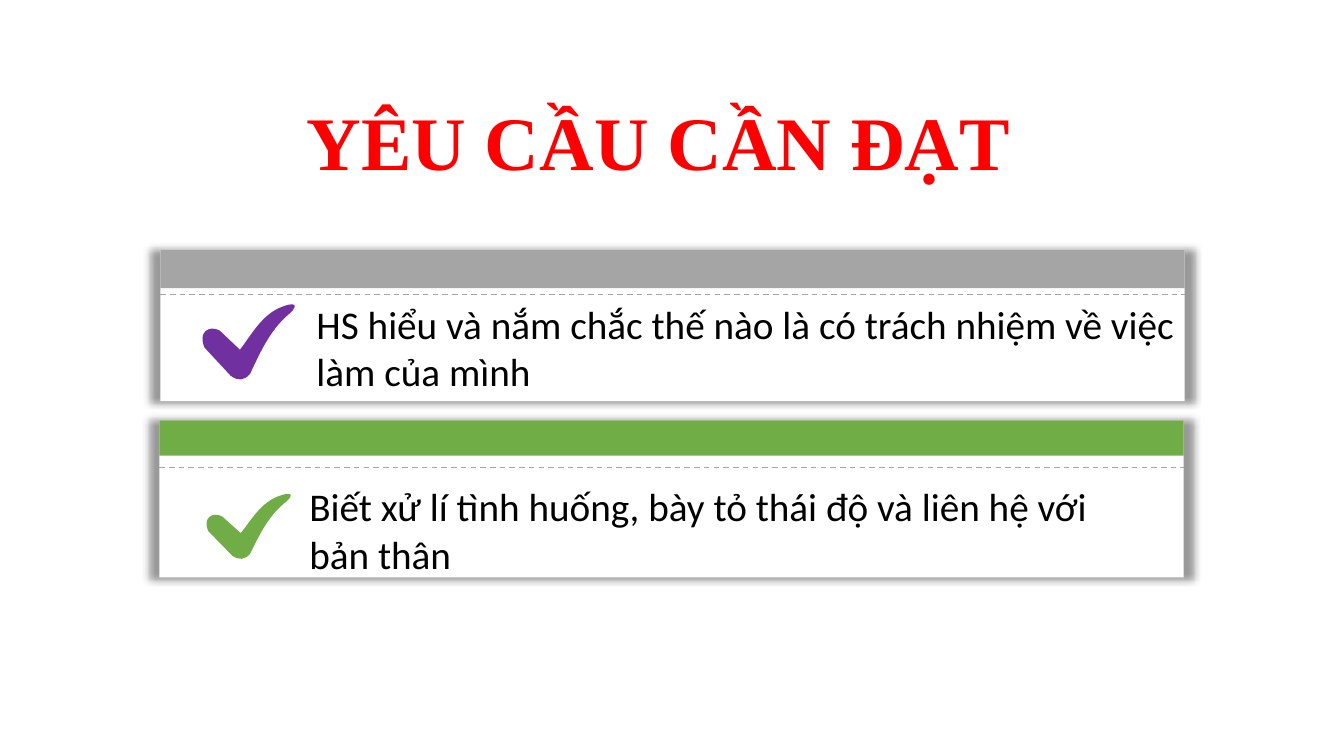
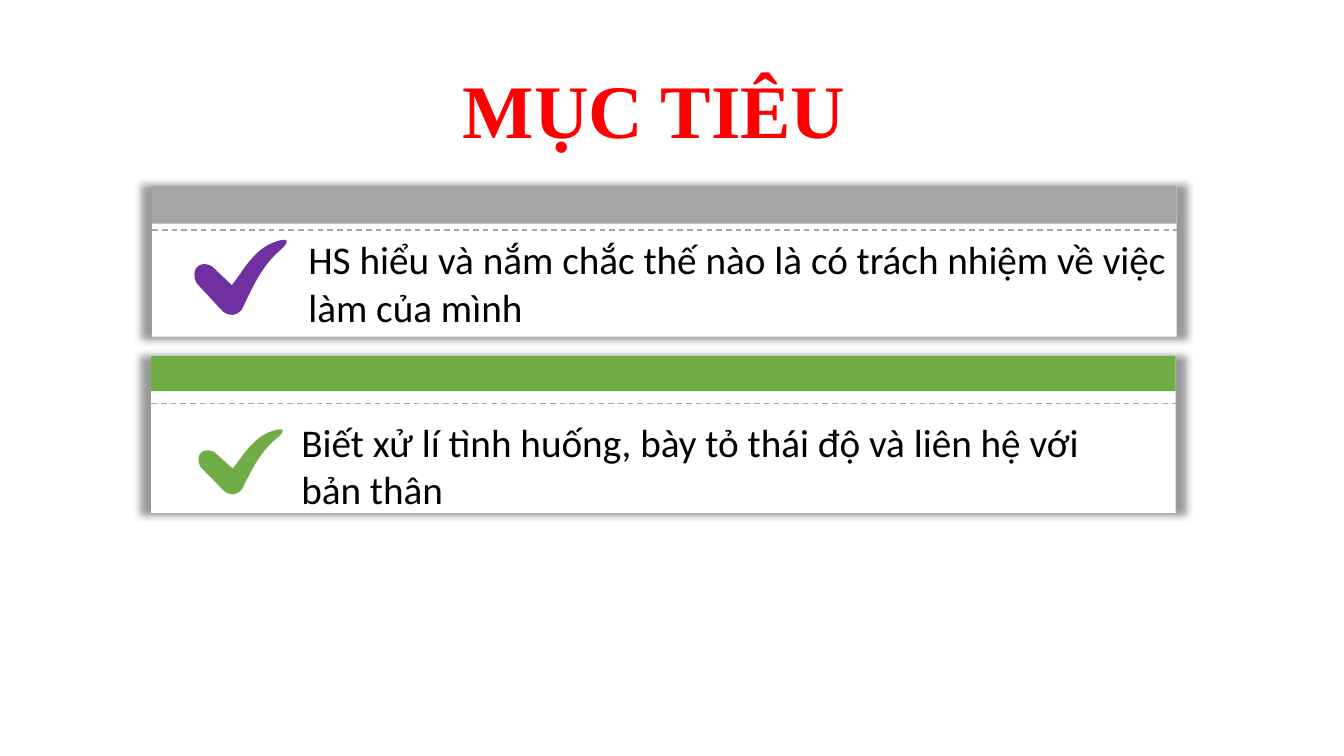
import pptx
import pptx.util
import pptx.dml.color
import pptx.enum.dml
import pptx.enum.shapes
import pptx.enum.text
import pptx.oxml
import pptx.oxml.ns

Inches, Pt = pptx.util.Inches, pptx.util.Pt
RGBColor = pptx.dml.color.RGBColor
RECT = pptx.enum.shapes.MSO_SHAPE.RECTANGLE

RED = RGBColor(0xFF, 0x00, 0x00)
BLACK = RGBColor(0x00, 0x00, 0x00)
WHITE = RGBColor(0xFF, 0xFF, 0xFF)
GRAY = RGBColor(0xA5, 0xA5, 0xA5)
GREEN = RGBColor(0x70, 0xAD, 0x47)
PURPLE = RGBColor(0x70, 0x30, 0xA0)
GOLD = RGBColor(0xBD, 0x8E, 0x00)

# Content: title, title position, top left of the cards
SLIDES = [
    ("YÊU CẦU CẦN ĐẠT", (2.78, 0.95), (1.59, 2.48)),
    ("MỤC TIÊU", (2.74, 0.63), (1.51, 1.84)),
]
# "at" is measured from the top left of the cards, the other places from the card
CARDS = [
    dict(text="HS hiểu và nắm chắc thế nào là có trách nhiệm về việc làm của mình",
         at=(0, 0), height=1.5, band=0.38, band_color=GRAY, rule=0.44,
         check=(0.42, 0.54, 0.92, 0.74), check_color=PURPLE, text_box=(1.45, 0.45, 8.71)),
    dict(text="Biết xử lí tình huống, bày tỏ thái độ và liên hệ với bản thân",
         at=(-0.01, 1.69), height=1.56, band=0.35, band_color=GREEN, rule=0.47,
         check=(0.47, 0.73, 0.84, 0.64), check_color=GREEN, text_box=(1.39, 0.57, 8.43)),
]
CARD_WIDTH = 10.16

# Check mark in a CHECK_SIZE box: pen command and its points
CHECK_SIZE = (0.92, 0.74)
CHECK_OUTLINE = [
    ("moveTo", [(0.37, 0.45)]),
    ("lnTo", [(0.17, 0.26)]),
    ("cubicBezTo", [(0.06, 0.20), (-0.05, 0.28), (0.02, 0.43)]),
    ("lnTo", [(0.28, 0.71)]),
    ("cubicBezTo", [(0.35, 0.76), (0.41, 0.76), (0.47, 0.69)]),
    ("cubicBezTo", [(0.57, 0.48), (0.66, 0.27), (0.84, 0.11)]),
    ("cubicBezTo", [(0.93, 0.04), (0.96, -0.04), (0.80, 0.02)]),
    ("cubicBezTo", [(0.59, 0.09), (0.48, 0.31), (0.37, 0.45)]),
    ("close", []),
]

NS = pptx.oxml.ns.nsdecls("a")
SHADOW = (f'<a:effectLst {NS}><a:outerShdw blurRad="63500" sx="102000" sy="102000" '
          'algn="ctr" rotWithShape="0"><a:srgbClr val="000000"><a:alpha val="40000"/>'
          '</a:srgbClr></a:outerShdw></a:effectLst>')
NO_EFFECT = f"<a:effectLst {NS}/>"
TITLE_OUTLINE = (f'<a:ln {NS} w="9000"><a:solidFill><a:srgbClr val="{GOLD}"/>'
                 '</a:solidFill></a:ln>')


def paint(sp, color):
    sp.shadow.inherit = False
    sp.fill.solid()
    sp.fill.fore_color.rgb = color
    sp.line.fill.background()


def add_rect(shapes, x, y, w, h, color):
    sp = shapes.add_shape(RECT, Inches(x), Inches(y), Inches(w), Inches(h))
    paint(sp, color)
    return sp


def add_text(shapes, x, y, w, h, text, font, size, color):
    tf = shapes.add_textbox(Inches(x), Inches(y), Inches(w), Inches(h)).text_frame
    tf.word_wrap = True
    p = tf.paragraphs[0]
    r = p.add_run()
    r.text = text
    r.font.name, r.font.size = font, Pt(size)
    r.font.color.rgb = color
    return tf, p, r


def add_title(shapes, x, y, text):
    tf, p, r = add_text(shapes, x, y, 7.5, 0.89, text, "Times New Roman", 54, RED)
    tf.vertical_anchor = pptx.enum.text.MSO_ANCHOR.MIDDLE
    p.alignment = pptx.enum.text.PP_ALIGN.CENTER
    r.font.bold = True
    r.font._element.insert(0, pptx.oxml.parse_xml(TITLE_OUTLINE))


def add_rule(shapes, x, y):
    line = shapes.add_connector(pptx.enum.shapes.MSO_CONNECTOR.STRAIGHT, Inches(x),
                                Inches(y), Inches(x + CARD_WIDTH), Inches(y))
    line.line.color.rgb = GRAY
    line.line.width = Pt(1)
    line.line.dash_style = pptx.enum.dml.MSO_LINE.DASH
    line._element.spPr.append(pptx.oxml.parse_xml(NO_EFFECT))


def add_panel(shapes, x, y, card):
    """White panel with soft shadow, colour band and dashed rule."""
    group = shapes.add_group_shape().shapes
    panel = add_rect(group, x, y, CARD_WIDTH, card["height"], WHITE)
    sp_pr = panel._element.spPr
    sp_pr.remove(sp_pr.find(pptx.oxml.ns.qn("a:effectLst")))
    sp_pr.append(pptx.oxml.parse_xml(SHADOW))
    add_rect(group, x, y, CARD_WIDTH, card["band"], card["band_color"])
    add_rule(group, x, y + card["rule"])


def add_check(shapes, x, y, card):
    """Freeform sized by its box, then given the curved outline."""
    dx, dy, w, h = card["check"]
    left, top = Inches(x + dx), Inches(y + dy)
    builder = shapes.build_freeform(left, top)
    builder.add_line_segments([(left + Inches(w), top + Inches(h))], close=True)
    sp = builder.convert_to_shape()
    paint(sp, card["check_color"])
    outline = sp._element.spPr.find(".//" + pptx.oxml.ns.qn("a:path"))
    for child in list(outline):
        outline.remove(child)
    for command, points in CHECK_OUTLINE:
        pts = "".join(f'<a:pt x="{int(Inches(px * w / CHECK_SIZE[0]))}" '
                      f'y="{int(Inches(py * h / CHECK_SIZE[1]))}"/>' for px, py in points)
        outline.append(pptx.oxml.parse_xml(f"<a:{command} {NS}>{pts}</a:{command}>"))


def add_goal(shapes, x, y, card):
    dx, dy, w = card["text_box"]
    tf = add_text(shapes, x + dx, y + dy, w, 1.04, card["text"], "Calibri", 28, BLACK)[0]
    tf.auto_size = pptx.enum.text.MSO_AUTO_SIZE.SHAPE_TO_FIT_TEXT


def main():
    prs = pptx.Presentation()
    prs.slide_width, prs.slide_height = Inches(13.33), Inches(7.5)
    for title, title_at, (left, top) in SLIDES:
        shapes = prs.slides.add_slide(prs.slide_layouts[6]).shapes
        add_title(shapes, *title_at, title)
        # Panels lie at the back, then check marks, then texts
        for add_part in (add_panel, add_check, add_goal):
            for card in CARDS:
                add_part(shapes, left + card["at"][0], top + card["at"][1], card)
    prs.save("out.pptx")


if __name__ == "__main__":
    main()
